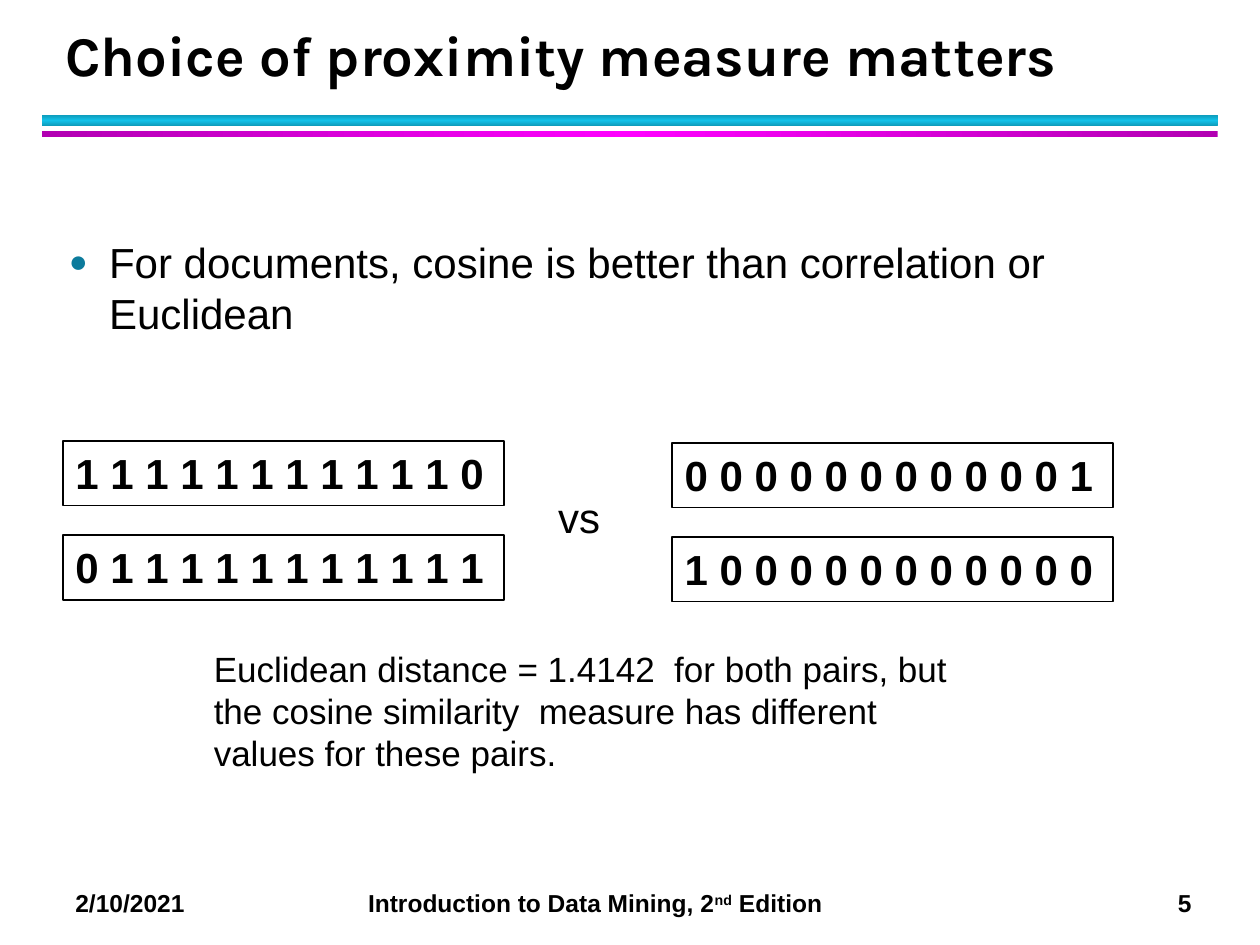
import pptx
import pptx.dml.color
import pptx.enum.shapes
import pptx.enum.text
import pptx.oxml
import pptx.oxml.ns
import pptx.util

Cm, Pt = pptx.util.Cm, pptx.util.Pt
RGBColor = pptx.dml.color.RGBColor
RECT = pptx.enum.shapes.MSO_SHAPE.RECTANGLE
ANCHOR = pptx.enum.text.MSO_ANCHOR

BLACK = RGBColor(0x00, 0x00, 0x00)
TEAL = RGBColor(0x0C, 0x7B, 0x9C)
CYAN = RGBColor(0x12, 0xC2, 0xE9)
DARK_CYAN = RGBColor(0x0E, 0x9B, 0xBA)
MAGENTA = RGBColor(0xFF, 0x00, 0xFF)
DARK_MAGENTA = RGBColor(0xB2, 0x00, 0xB2)

NS = pptx.oxml.ns.nsdecls("a")


def add_run(p, text, size, bold=False, font="Arial"):
    r = p.add_run()
    r.text = text
    r.font.size = Pt(size)
    r.font.bold = bold
    r.font.name = font
    r.font.color.rgb = BLACK
    return r


def add_text_box(s, left, top, width, height, anchor=ANCHOR.TOP):
    """Add an empty wrapping text box, in cm, and return its first paragraph."""
    tf = s.shapes.add_textbox(Cm(left), Cm(top), Cm(width), Cm(height)).text_frame
    tf.word_wrap = True
    tf.vertical_anchor = anchor
    return tf.paragraphs[0]


def add_gradient_bar(s, left, top, width, height, edge, middle, angle):
    """Add a bar shaded from edge to middle and back, angle in degrees."""
    sp = s.shapes.add_shape(RECT, Cm(left), Cm(top), Cm(width), Cm(height))
    sp.shadow.inherit = False
    sp.line.fill.background()
    sp.fill.gradient()
    stops = "".join(
        f'<a:gs pos="{pos * 1000}"><a:srgbClr val="{color}"/></a:gs>'
        for pos, color in ((0, edge), (50, middle), (100, edge)))
    grad = pptx.oxml.parse_xml(
        f'<a:gradFill {NS} rotWithShape="1"><a:gsLst>{stops}</a:gsLst>'
        f'<a:lin ang="{angle * 60000}" scaled="0"/></a:gradFill>')
    sp_pr = sp._element.spPr
    sp_pr.replace(sp_pr.find(pptx.oxml.ns.qn("a:gradFill")), grad)


def add_header(s, left, top, width):
    add_gradient_bar(s, left, top + 1.89, width, 0.22, DARK_CYAN, CYAN, 90)
    add_gradient_bar(s, left, top + 2.21, width, 0.12, DARK_MAGENTA, MAGENTA, 0)
    p = add_text_box(s, left + 0.22, top, 23, 1.47, ANCHOR.BOTTOM)
    p.line_spacing = Pt(36)
    add_run(p, "Choice of proximity measure matters", 32, True, "Karla")


def add_bullet(s, left, top, width, height):
    p = add_text_box(s, left, top, width, height)
    add_run(p, "For documents, cosine is better than correlation or Euclidean", 24)
    p_pr = p._p.get_or_add_pPr()
    p_pr.set("marL", str(Cm(0.81)))
    p_pr.set("indent", str(-Cm(0.81)))
    for xml in (f'<a:buClr {NS}><a:srgbClr val="{TEAL}"/></a:buClr>',
                f'<a:buSzPct {NS} val="75000"/>',
                f'<a:buFont {NS} typeface="Arial"/>',
                f'<a:buChar {NS} char="●"/>'):
        p_pr.append(pptx.oxml.parse_xml(xml))


def add_vector_pair(s, left, top, width, vectors):
    """Stack the vectors as outlined boxes."""
    for i, vector in enumerate(vectors):
        sp = s.shapes.add_shape(
            RECT, Cm(left), Cm(top + 1.9 * i), Cm(width), Cm(1.3))
        sp.shadow.inherit = False
        sp.fill.background()
        sp.line.color.rgb = BLACK
        sp.line.width = Pt(1)
        tf = sp.text_frame
        tf.word_wrap = True
        tf.vertical_anchor = ANCHOR.TOP
        p = tf.paragraphs[0]
        p.alignment = pptx.enum.text.PP_ALIGN.LEFT
        add_run(p, vector, 24, True)


def add_comparison(s, left, top):
    add_vector_pair(s, left, top, 8.89,
                    ("1 1 1 1 1 1 1 1 1 1 1 0", "0 1 1 1 1 1 1 1 1 1 1 1"))
    add_vector_pair(s, left + 12.28, top + 0.04, 8.89,
                    ("0 0 0 0 0 0 0 0 0 0 0 1", "1 0 0 0 0 0 0 0 0 0 0 0"))
    add_run(add_text_box(s, left + 9.73, top + 0.9, 1.55, 1.7), "vs", 24)
    add_run(add_text_box(s, left + 2.79, top + 4.04, 15.44, 2.82),
            "Euclidean distance = 1.4142  for both pairs, but the cosine "
            "similarity  measure has different values for these pairs.", 20)


def add_footer(s, left, top, width, height):
    p = add_text_box(s, left, top, width, height)
    add_run(p, "2/10/2021\tIntroduction to Data Mining, 2", 14, True)
    add_run(p, "nd", 14, True).font._element.set("baseline", "30000")
    add_run(p, " Edition\t5", 14, True)
    p._p.get_or_add_pPr().append(pptx.oxml.parse_xml(
        f'<a:tabLst {NS}><a:tab pos="{Cm(5.9)}" algn="l"/>'
        f'<a:tab pos="{Cm(22.5)}" algn="r"/></a:tabLst>'))


def main():
    prs = pptx.Presentation()
    prs.slide_width, prs.slide_height = Cm(25.4), Cm(19.05)
    s = prs.slides.add_slide(prs.slide_layouts[6])
    add_header(s, 0.85, 0.43, 23.7)
    add_bullet(s, 1.14, 4.65, 23.11, 2.3)
    add_comparison(s, 1.27, 8.89)
    add_footer(s, 1.27, 17.78, 23.7, 0.86)
    prs.save("out.pptx")


if __name__ == "__main__":
    main()
